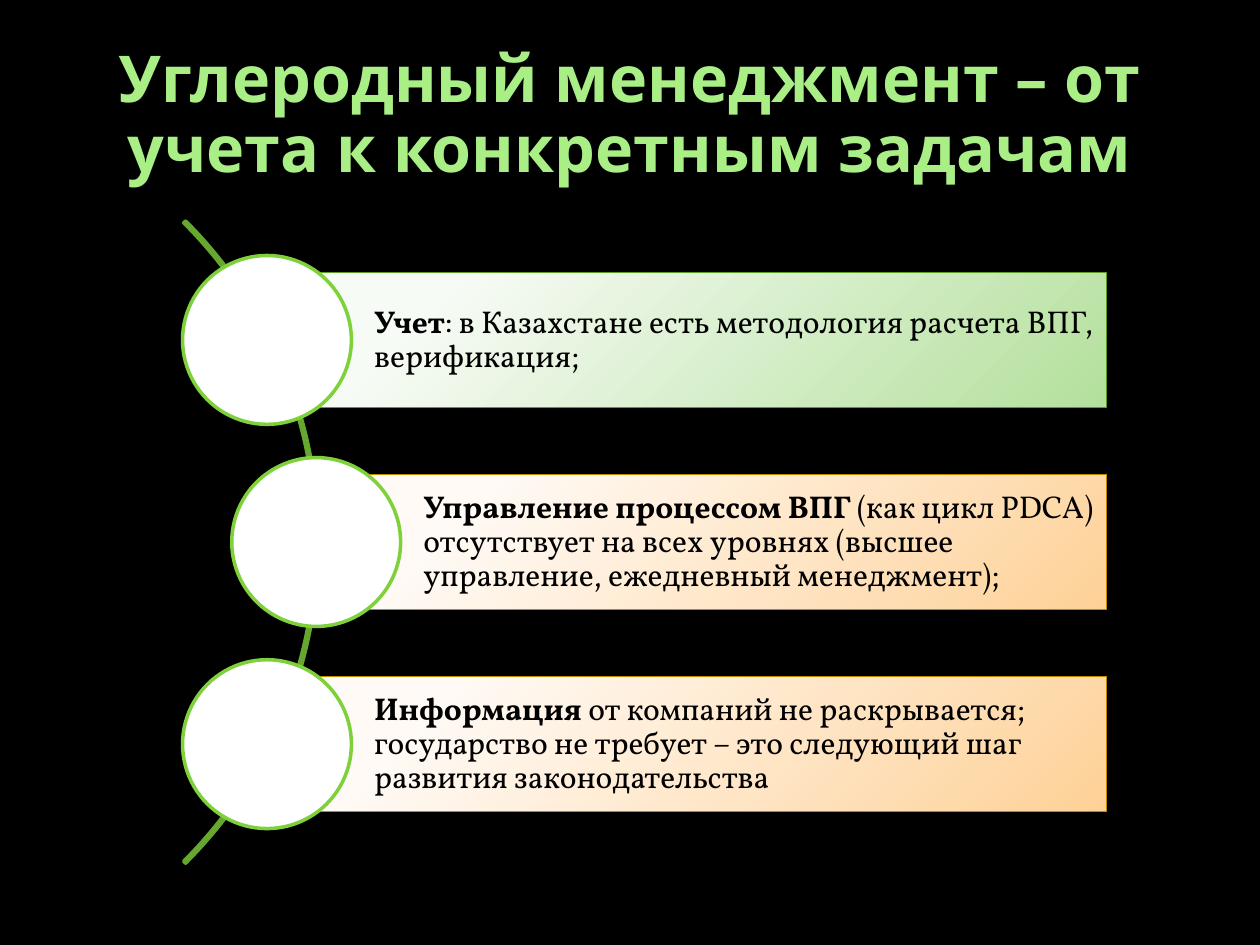
from lxml.etree import SubElement
from pptx import Presentation
from pptx.dml.color import RGBColor
from pptx.enum.shapes import MSO_SHAPE
from pptx.enum.text import MSO_ANCHOR, PP_ALIGN
from pptx.oxml.ns import qn
from pptx.util import Pt

BAR_RIGHT, BAR_HEIGHT = 632.2, 77
CIRCLE_SIZE = 96.5
ARC_SIZE = 519
MIDDLE, PITCH = 309.75, 115.5
GREEN = ("F7FBF5", "B3E09C", "5C9D25")
ORANGE = ("FFFAF5", "FED197", "C08900")
STEPS = [
    (152.6, GREEN, "Учет", ": в Казахстане есть методология расчета ВПГ, верификация;"),
    (180.7, ORANGE, "Управление процессом ВПГ ",
     "(как цикл PDCA) отсутствует на всех уровнях (высшее управление, "
     "ежедневный менеджмент);"),
    (152.6, ORANGE, "Информация",
     " от компаний не раскрывается; государство не требует – это следующий шаг "
     "развития законодательства"),
]


def color(value):
    return RGBColor.from_string(value)


class SlideBuilder:
    """Draws on one slide in the deck's style."""

    title_font, body_font = "Noto Sans", "Vollkorn"

    def __init__(self, slide):
        self.slide = slide

    def background(self, value):
        fill = self.slide.background.fill
        fill.solid()
        fill.fore_color.rgb = color(value)

    def title(self, text):
        box = self.slide.shapes.add_textbox(Pt(36), Pt(21.6), Pt(648), Pt(90))
        frame = box.text_frame
        frame.word_wrap = True
        frame.vertical_anchor = MSO_ANCHOR.MIDDLE
        para = frame.paragraphs[0]
        para.text = text
        para.alignment = PP_ALIGN.CENTER
        self.style(para, self.title_font, 36.9, "A9EF86")
        para.font.bold = True

    def style(self, para, font, size, value):
        para.line_spacing = 0.9
        para.font.name = font
        para.font.size = Pt(size)
        para.font.color.rgb = color(value)

    def shape(self, kind, left, top, width, height, line, weight, fill=None):
        shape = self.slide.shapes.add_shape(kind, Pt(left), Pt(top), Pt(width), Pt(height))
        shape.shadow.inherit = False
        shape.line.color.rgb = color(line)
        shape.line.width = Pt(weight)
        if fill:
            shape.fill.solid()
            shape.fill.fore_color.rgb = color(fill)
        return shape

    def arc(self, center_x, center_y):
        half = ARC_SIZE / 2
        arc = self.shape(MSO_SHAPE.BLOCK_ARC, center_x - half, center_y - half,
                         ARC_SIZE, ARC_SIZE, "66A72F", 2, "66A72F")
        for index, value in enumerate((189, 27, 0.003)):
            arc.adjustments[index] = value

    def circle(self, center_x, center_y):
        half = CIRCLE_SIZE / 2
        self.shape(MSO_SHAPE.OVAL, center_x - half, center_y - half,
                   CIRCLE_SIZE, CIRCLE_SIZE, "7FD13B", 2, "FFFFFF")

    def bar(self, left, center_y, colors, lead, rest):
        light, dark, line = colors
        bar = self.shape(MSO_SHAPE.RECTANGLE, left, center_y - BAR_HEIGHT / 2,
                         BAR_RIGHT - left, BAR_HEIGHT, line, 0.75)
        self.radial_fill(bar, light, dark)
        frame = bar.text_frame
        frame.word_wrap = True
        frame.vertical_anchor = MSO_ANCHOR.MIDDLE
        frame.margin_left = Pt(61.2)
        frame.margin_top = frame.margin_right = frame.margin_bottom = Pt(3.6)
        para = frame.paragraphs[0]
        para.alignment = PP_ALIGN.LEFT
        self.style(para, self.body_font, 18, "000000")
        for text, bold in ((lead, True), (rest, False)):
            span = para.add_run()
            span.text = text
            span.font.bold = bold

    def radial_fill(self, shape, inner, outer):
        """Fill with a circular gradient centred beyond the top left corner."""
        shape.fill.gradient()
        stops = shape.fill.gradient_stops
        for stop, position, value in zip(stops, (0.2, 1), (inner, outer)):
            stop.position = position
            stop.color.rgb = color(value)
        gradient = shape._element.spPr.find(qn("a:gradFill"))
        gradient.remove(gradient.find(qn("a:lin")))
        circle = SubElement(gradient, qn("a:path"), path="circle")
        SubElement(circle, qn("a:fillToRect"),
                   l="-15000", t="-15000", r="115000", b="115000")


def main():
    deck = Presentation()
    deck.slide_width, deck.slide_height = Pt(720), Pt(540)
    page = SlideBuilder(deck.slides.add_slide(deck.slide_layouts[6]))
    page.background("000000")
    page.title("Углеродный менеджмент – от учета к конкретным задачам")
    page.arc(-77.4, MIDDLE)
    for index, (left, colors, lead, rest) in enumerate(STEPS):
        center_y = MIDDLE + (index - 1) * PITCH
        page.bar(left, center_y, colors, lead, rest)
        page.circle(left, center_y)
    deck.save("out.pptx")


if __name__ == "__main__":
    main()
